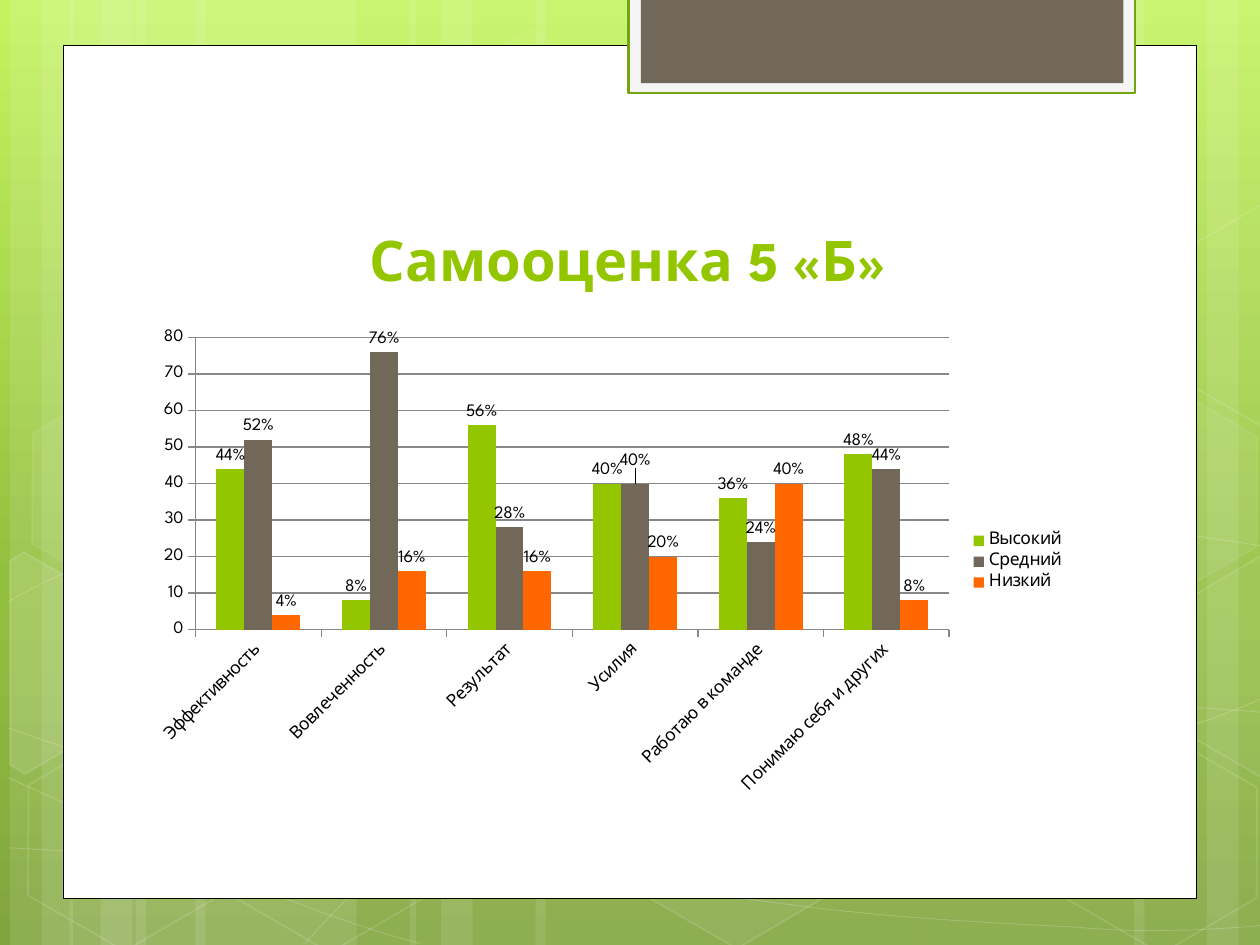
from copy import deepcopy
from math import cos, radians, sin

from lxml.etree import SubElement
from pptx import Presentation
from pptx.chart.data import CategoryChartData
from pptx.dml.color import RGBColor
from pptx.enum.chart import XL_CHART_TYPE, XL_LABEL_POSITION, XL_LEGEND_POSITION, XL_TICK_MARK
from pptx.enum.shapes import MSO_SHAPE
from pptx.enum.text import MSO_ANCHOR, PP_ALIGN
from pptx.oxml.ns import qn
from pptx.util import Cm, Pt

FONT = "League Spartan"
WHITE = "FFFFFF"
GREEN = "94C600"
BROWN = "71685A"
GREY = "878787"

STRIPES = [
    (2.74, 4.45), (0.2, 1.27), (0.84, 2.11), (3.94, 4.45), (1.4, 1.27), (2.03, 2.11),
    (18.62, 4.45), (24.33, 1.27), (22.86, 2.11), (10.8, 7.82), (8.26, 1.27), (8.89, 2.11),
]
CURVES = [
    [(0.18, 17.09), (1.55, 17.17), (2.92, 17.25), (4.83, 17.22), (6.73, 17.2),
     (9.09, 17.15), (11.63, 16.89), (14.17, 16.64), (17.78, 16.15), (20.12, 15.67),
     (22.43, 15.19), (24.82, 14.43), (25.58, 14)],
    [(0.18, 12.12), (0.91, 11.71), (1.65, 11.33), (3.07, 10.95), (4.52, 10.52),
     (6.58, 10.01), (8.81, 9.83), (11.07, 9.65), (13.82, 9.63), (16.61, 9.83),
     (19.41, 10.03), (24.05, 10.82), (25.58, 11.02)],
    [(0.15, 15.67), (3.23, 17.07), (6.27, 18.47), (8.48, 19.02)],
    [(0.18, 14.68), (0.97, 14.96), (1.78, 15.24), (3.25, 15.65), (4.72, 16.03),
     (6.93, 16.66), (9.07, 17.09), (11.18, 17.53), (13.84, 17.98), (15.95, 18.24),
     (18.06, 18.52), (20.32, 18.62), (21.67, 18.69), (22.99, 18.8), (23.34, 18.75),
     (24, 18.75), (24.66, 18.72), (25.12, 18.69), (25.58, 18.64)],
    [(6.15, 19.02), (6.6, 18.52), (7.06, 18.01), (7.67, 17.55), (8.28, 17.09),
     (9.14, 16.59), (9.86, 16.23), (10.57, 15.88), (11, 15.72), (11.94, 15.47),
     (12.85, 15.21), (14.55, 14.86), (15.44, 14.68), (16.36, 14.5), (16.48, 14.5),
     (17.27, 14.45), (18.06, 14.38), (19.3, 14.3), (20.17, 14.27), (21.06, 14.25),
     (22.5, 14.27), (22.5, 14.27), (23.07, 14.27), (23.64, 14.27), (24.21, 14.27),
     (24.66, 14.3), (25.1, 14.33), (25.32, 14.35), (25.55, 14.38), (25.48, 14.35),
     (25.55, 14.38)],
]
HEXES = [
    (8.48, 0.91, 4, 8), (12.62, 14.96, 6, 12), (0.28, 15.01, 0, 12), (0.36, 7.92, 7, 8),
    (4.42, 15.04, 0, 12), (19.13, 11.51, 10, 12), (21.18, 15.06, 0, 12), (21.18, 7.98, 7, 8),
]
LEFT = [(0.2, 11.3), (0.48, 11.13), (2.44, 12.24), (2.41, 14.48), (0.51, 15.6), (0.2, 15.42)]
RIGHT = [(23.52, 12.32), (25.43, 11.2), (25.63, 11.33), (25.63, 15.57), (25.45, 15.67),
         (23.52, 14.55)]

TOPICS = ["Эффективность", "Вовлеченность", "Результат", "Усилия", "Работаю в команде",
          "Понимаю себя и других"]
LEVELS = [
    ("Высокий", GREEN, (44, 8, 56, 40, 36, 48)),
    ("Средний", BROWN, (52, 76, 28, 40, 24, 44)),
    ("Низкий", "FF6700", (4, 16, 16, 20, 40, 8)),
]


def tint(fill, color, alpha=100):
    """Fill with a solid colour at an opacity in percent."""
    if not alpha:
        fill.background()
        return
    fill.solid()
    fill.fore_color.rgb = RGBColor.from_string(color)
    if alpha < 100:
        node = fill._xPr.find(f"{qn('a:solidFill')}/{qn('a:srgbClr')}")
        SubElement(node, qn("a:alpha")).set("val", str(alpha * 1000))


def style(shape, color=WHITE, alpha=100, edge=None, width=1, fade=100):
    """Set fill and outline and drop the shadow."""
    shape.shadow.inherit = False
    tint(shape.fill, color, alpha)
    if edge:
        tint(shape.line.fill, edge, fade)
        shape.line.width = Pt(width)
    else:
        shape.line.fill.background()


def block(slide, box, kind=MSO_SHAPE.RECTANGLE, **look):
    """Add a styled preset shape."""
    shape = slide.shapes.add_shape(kind, *map(Cm, box))
    style(shape, **look)
    return shape


def outline(slide, points, close, **look):
    """Add a styled freeform through the points."""
    first, *rest = [(Cm(x), Cm(y)) for x, y in points]
    pen = slide.shapes.build_freeform(*first)
    pen.add_line_segments(rest, close=close)
    shape = pen.convert_to_shape()
    style(shape, **look)
    return shape


def curve(slide, knots):
    """Add a faint line of cubic curves, three knots to each."""
    shape = outline(slide, knots, False, alpha=0, edge=WHITE, width=0.5, fade=20)
    route = shape._element.find(f".//{qn('a:path')}")
    lines = route.findall(qn("a:lnTo"))
    for start in range(0, len(lines), 3):
        cubic = SubElement(route, qn("a:cubicBezTo"))
        for line in lines[start:start + 3]:
            cubic.append(line[0])
            route.remove(line)


def shard(slide, points, hub, alpha):
    """Add a cut hexagon turned by 30 degrees about its hub."""
    turn = radians(-30)
    level = []
    for x, y in points:
        dx, dy = x - hub[0], y - hub[1]
        level.append((hub[0] + dx * cos(turn) - dy * sin(turn),
                      hub[1] + dx * sin(turn) + dy * cos(turn)))
    shape = outline(slide, level, True, alpha=alpha, edge=WHITE, fade=12)
    shape.rotation = 30


def backdrop(slide):
    """Paint the green gradient behind everything."""
    fill = slide.background.fill
    fill.gradient()
    fill.gradient_angle = 270
    stops = slide.element.find(f".//{qn('a:gsLst')}")
    stops.insert(1, deepcopy(stops[0]))
    shades = [(0, "C3F35F"), (0.62, "93BF3F"), (1, "81A53E")]
    for stop, (place, color) in zip(fill.gradient_stops, shades):
        stop.position = place
        stop.color.rgb = RGBColor.from_string(color)


def decor(slide):
    """Add the pale stripes, curves and hexagons."""
    for left, width in STRIPES:
        block(slide, (left, 0, width, 19.05), alpha=10)
    for knots in CURVES:
        curve(slide, knots)
    for left, top, alpha, fade in HEXES:
        hexa = block(slide, (left, top, 4.45, 3.86), MSO_SHAPE.HEXAGON,
                     alpha=alpha, edge=WHITE, fade=fade)
        hexa.adjustments[0] = 0.285
        hexa.rotation = 30
    shard(slide, LEFT, (0.91, 13.59), 10)
    shard(slide, RIGHT, (25.02, 13.21), 4)
    shard(slide, [(x, y - 7.08) for x, y in RIGHT], (25.02, 6.13), 0)


def title(slide, text, box):
    """Add the centred slide title."""
    frame = slide.shapes.add_textbox(*map(Cm, box)).text_frame
    frame.word_wrap = True
    frame.vertical_anchor = MSO_ANCHOR.BOTTOM
    frame.text = text
    para = frame.paragraphs[0]
    para.alignment = PP_ALIGN.CENTER
    font = para.runs[0].font
    font.name, font.size, font.bold = FONT, Pt(32), True
    font.color.rgb = RGBColor.from_string(GREEN)


def columns(slide, box):
    """Add the clustered column chart of self-assessment levels."""
    data = CategoryChartData()
    data.categories = TOPICS
    for name, _, values in LEVELS:
        data.add_series(name, values)
    kind = XL_CHART_TYPE.COLUMN_CLUSTERED
    chart = slide.shapes.add_chart(kind, *map(Cm, box), data).chart
    chart.font.name, chart.font.size = FONT, Pt(10)
    chart.font.color.rgb = RGBColor.from_string("000000")
    chart.has_title = False
    chart.has_legend = True
    chart.legend.position = XL_LEGEND_POSITION.RIGHT
    chart.legend.include_in_layout = False
    plot = chart.plots[0]
    plot.vary_by_categories = False
    plot.gap_width, plot.overlap = 150, 0
    for series, (_, color, values) in zip(plot.series, LEVELS):
        tint(series.format.fill, color)
        series.invert_if_negative = False
        series.data_labels.show_value = True
        for place, value in enumerate(values):
            label = series.points[place].data_label
            label.text_frame.text = f"{value}%"
            font = label.text_frame.paragraphs[0].runs[0].font
            font.name, font.size = FONT, Pt(10)
            label.position = XL_LABEL_POSITION.OUTSIDE_END
    raise_label(plot.series[1].points[3].data_label)
    topics, scale = chart.category_axis, chart.value_axis
    scale.minimum_scale, scale.maximum_scale, scale.major_unit = 0, 80, 10
    scale.has_major_gridlines = True
    for line in (topics.format.line, scale.format.line, scale.major_gridlines.format.line):
        tint(line.fill, GREY)
        line.width = Pt(0.7)
    for axis in (topics, scale):
        axis.major_tick_mark = XL_TICK_MARK.OUTSIDE
        axis.tick_labels.font.size = Pt(10)
    topics._element.find(f"{qn('c:txPr')}/{qn('a:bodyPr')}").set("rot", "-2700000")


def raise_label(label):
    """Lift one data label clear of its neighbour."""
    node = label._get_or_add_dLbl()
    layout = SubElement(node, qn("c:layout"))
    manual = SubElement(layout, qn("c:manualLayout"))
    for axis, shift in (("c:x", 0), ("c:y", -0.02)):
        SubElement(manual, qn(axis)).set("val", str(shift))
    node.insert(1, layout)


def main():
    """Build and save the slide."""
    deck = Presentation()
    deck.slide_width, deck.slide_height = Cm(25.4), Cm(19.05)
    slide = deck.slides.add_slide(deck.slide_layouts[6])
    backdrop(slide)
    decor(slide)
    block(slide, (1.27, 0.91, 22.86, 17.2), edge="000000", width=0.5)
    block(slide, (12.67, -0.05, 10.21, 1.93), color="F5F5F5", edge="74A510", width=1.25)
    block(slide, (12.92, -0.05, 9.73, 1.73), color=BROWN)
    title(slide, "Самооценка 5 «Б»", (2.9, 2.84, 19.51, 3.18))
    columns(slide, (2.9, 6.45, 18.82, 9.75))
    deck.save("out.pptx")


if __name__ == "__main__":
    main()
